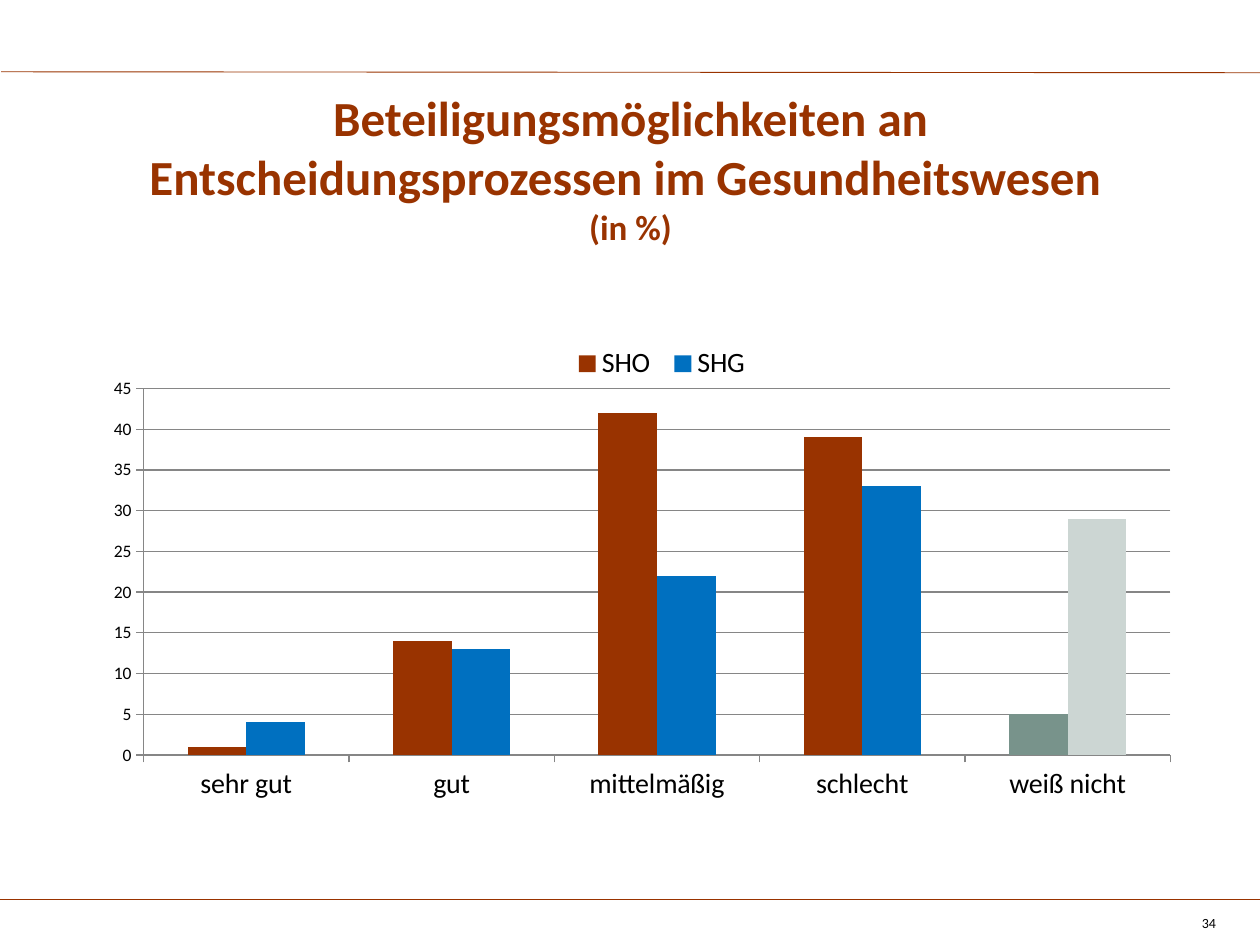
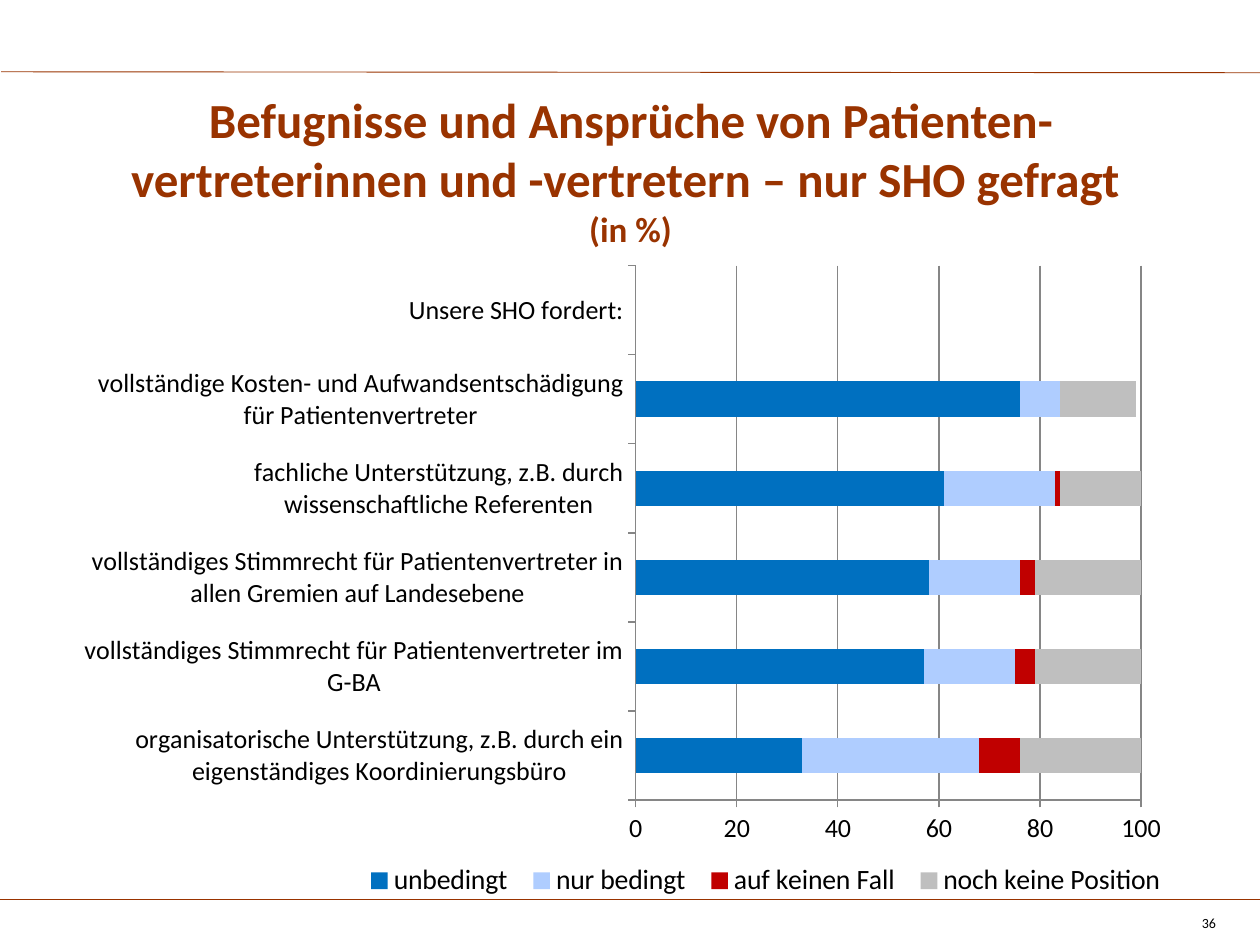
from dataclasses import dataclass, field
from typing import Optional

from lxml.etree import SubElement
from pptx import Presentation
from pptx.chart.data import CategoryChartData
from pptx.dml.color import RGBColor
from pptx.enum.chart import XL_CHART_TYPE as ChartType
from pptx.enum.chart import XL_LEGEND_POSITION as LegendPosition
from pptx.enum.chart import XL_TICK_MARK as TickMark
from pptx.enum.shapes import MSO_CONNECTOR as Connector
from pptx.enum.text import MSO_ANCHOR as Anchor
from pptx.enum.text import PP_ALIGN as Align
from pptx.oxml import parse_xml
from pptx.oxml.ns import nsdecls, qn
from pptx.util import Inches, Pt

RUST = RGBColor(0x99, 0x33, 0x00)
BLUE = RGBColor(0x00, 0x70, 0xC0)
LIGHT_BLUE = RGBColor(0xAF, 0xCD, 0xFF)
RED = RGBColor(0xC0, 0x00, 0x00)
SILVER = RGBColor(0xBF, 0xBF, 0xBF)
SAGE = RGBColor(0x78, 0x93, 0x8B)
PALE_SAGE = RGBColor(0xCC, 0xD6, 0xD3)
AXIS_GRAY = RGBColor(0x86, 0x86, 0x86)
BLACK = RGBColor(0x00, 0x00, 0x00)
FONT = "Calibri"
WIDTH, HEIGHT = Inches(10), Inches(7.5)


@dataclass(frozen=True)
class Box:
    left: float
    top: float
    width: float
    height: float

    def on_slide(self) -> tuple[int, int, int, int]:
        return (int(self.left * WIDTH), int(self.top * HEIGHT),
                int(self.width * WIDTH), int(self.height * HEIGHT))


@dataclass(frozen=True)
class Rule:
    left: float
    start: float
    end: float


@dataclass(frozen=True)
class Series:
    name: str
    values: tuple[Optional[float], ...]
    color: RGBColor
    point_colors: dict[int, RGBColor] = field(default_factory=dict)


@dataclass(frozen=True)
class ChartSlide:
    title: str
    title_top: float
    number: int
    chart_type: ChartType
    chart_box: Box
    plot_box: Box
    legend_box: Box
    categories: tuple[str, ...]
    series: tuple[Series, ...]
    category_size: int
    value_size: int
    maximum: int
    major_unit: int
    overlap: int


RULES = (Rule(0.001, 0.076, 0.077), Rule(0, 0.952, 0.952))
NUMBER_BOX = Box(0.925, 0.961, 0.05, 0.023)

SLIDES = (
    ChartSlide(
        title="Beteiligungsmöglichkeiten an Entscheidungsprozessen im Gesundheitswesen ",
        title_top=0.089,
        number=34,
        chart_type=ChartType.COLUMN_CLUSTERED,
        chart_box=Box(0.075, 0.343, 0.866, 0.559),
        plot_box=Box(0.045, 0.122, 0.941, 0.694),
        legend_box=Box(0.43, 0.03, 0.18, 0.09),
        categories=("sehr gut", "gut", "mittelmäßig", "schlecht", "weiß nicht"),
        series=(
            Series("SHO", (1, 14, 42, 39, 5), RUST, {4: SAGE}),
            Series("SHG", (4, 13, 22, 33, 29), BLUE, {4: PALE_SAGE}),
        ),
        category_size=16,
        value_size=10,
        maximum=45,
        major_unit=5,
        overlap=0,
    ),
    ChartSlide(
        title="Befugnisse und Ansprüche von Patienten-vertreterinnen und "
              "-vertretern – nur SHO gefragt ",
        title_top=0.091,
        number=36,
        chart_type=ChartType.BAR_STACKED,
        chart_box=Box(0.067, 0.248, 0.867, 0.724),
        plot_box=Box(0.5, 0.046, 0.467, 0.781),
        legend_box=Box(0.24, 0.91, 0.76, 0.07),
        categories=(
            "organisatorische Unterstützung, z.B. durch ein eigenständiges Koordinierungsbüro",
            "vollständiges Stimmrecht für Patientenvertreter im G-BA",
            "vollständiges Stimmrecht für Patientenvertreter in allen Gremien auf Landesebene",
            "fachliche Unterstützung, z.B. durch wissenschaftliche Referenten",
            "vollständige Kosten- und Aufwandsentschädigung für Patientenvertreter",
            "Unsere SHO fordert:",
        ),
        series=(
            Series("unbedingt", (33, 57, 58, 61, 76, None), BLUE),
            Series("nur bedingt", (35, 18, 18, 22, 8, None), LIGHT_BLUE),
            Series("auf keinen Fall", (8, 4, 3, 1, 0, None), RED),
            Series("noch keine Position", (24, 21, 21, 16, 15, None), SILVER),
        ),
        category_size=15,
        value_size=15,
        maximum=100,
        major_unit=20,
        overlap=100,
    ),
)


def style_font(font, size: int, color: RGBColor = BLACK, bold: bool = False) -> None:
    font.name = FONT
    font.size = Pt(size)
    font.bold = bold
    font.color.rgb = color


def add_run(paragraph, text: str, size: int, color: RGBColor, bold: bool = False) -> None:
    run = paragraph.add_run()
    run.text = text
    style_font(run.font, size, color, bold)


def add_paragraph_box(slide, box: Box, align: Align, anchor: Anchor):
    frame = slide.shapes.add_textbox(*box.on_slide()).text_frame
    frame.word_wrap = True
    frame.vertical_anchor = anchor
    paragraph = frame.paragraphs[0]
    paragraph.alignment = align
    return paragraph


def add_rule(slide, rule: Rule) -> None:
    line = slide.shapes.add_connector(
        Connector.STRAIGHT, int(rule.left * WIDTH), int(rule.start * HEIGHT),
        WIDTH, int(rule.end * HEIGHT))
    line.line.color.rgb = RUST
    line.line.width = Pt(0.5)
    SubElement(line.element.spPr, qn("a:effectLst"))


def add_title(slide, text: str, top: float) -> None:
    paragraph = add_paragraph_box(
        slide, Box(0.067, top, 0.867, 0.177), Align.CENTER, Anchor.MIDDLE)
    add_run(paragraph, text, 28, RUST, True)
    paragraph.add_line_break()
    add_run(paragraph, "(in %)", 20, RUST, True)


def add_number(slide, number: int) -> None:
    paragraph = add_paragraph_box(slide, NUMBER_BOX, Align.RIGHT, Anchor.TOP)
    add_run(paragraph, str(number), 8, BLACK)


def make_layout(box: Box, target: str = ""):
    sizes = (("x", box.left), ("y", box.top), ("w", box.width), ("h", box.height))
    modes = "".join(f'<c:{axis}Mode val="edge"/>' for axis in "xy")
    shares = "".join(f'<c:{name} val="{share}"/>' for name, share in sizes)
    return parse_xml(f'<c:layout {nsdecls("c")}><c:manualLayout>{target}{modes}{shares}'
                     '</c:manualLayout></c:layout>')


def place_plot_and_legend(chart, plot_box: Box, legend_box: Box) -> None:
    plot_area = chart.element.find(".//" + qn("c:plotArea"))
    legend = chart.element.find(".//" + qn("c:legend"))
    for parent in (plot_area, legend):
        for layout in parent.findall(qn("c:layout")):
            parent.remove(layout)
    plot_area.insert(0, make_layout(plot_box, '<c:layoutTarget val="inner"/>'))
    legend.find(qn("c:legendPos")).addnext(make_layout(legend_box))


def style_axis(axis, size: int) -> None:
    axis.major_tick_mark = TickMark.OUTSIDE
    axis.minor_tick_mark = TickMark.NONE
    axis.format.line.color.rgb = AXIS_GRAY
    style_font(axis.tick_labels.font, size)


def paint(fill, color: RGBColor) -> None:
    fill.solid()
    fill.fore_color.rgb = color


def add_bar_chart(slide, content: ChartSlide) -> None:
    data = CategoryChartData(number_format="General")
    data.categories = content.categories
    for series in content.series:
        data.add_series(series.name, series.values)
    chart = slide.shapes.add_chart(
        content.chart_type, *content.chart_box.on_slide(), data).chart
    style_font(chart.font, content.value_size)
    chart.has_title = False
    chart.has_legend = True
    chart.legend.position = LegendPosition.BOTTOM
    chart.legend.include_in_layout = False
    style_font(chart.legend.font, 16)
    place_plot_and_legend(chart, content.plot_box, content.legend_box)

    style_axis(chart.category_axis, content.category_size)
    values = chart.value_axis
    style_axis(values, content.value_size)
    values.minimum_scale = 0
    values.maximum_scale = content.maximum
    values.major_unit = content.major_unit
    values.has_major_gridlines = True
    values.major_gridlines.format.line.color.rgb = AXIS_GRAY
    values.tick_labels.number_format = "#,##0"
    values.tick_labels.number_format_is_linked = False

    plot = chart.plots[0]
    plot.vary_by_categories = False
    plot.gap_width = 150
    plot.overlap = content.overlap
    for bars, series in zip(plot.series, content.series):
        bars.invert_if_negative = False
        paint(bars.format.fill, series.color)
        for index, color in series.point_colors.items():
            paint(bars.points[index].format.fill, color)


def add_chart_slide(presentation, content: ChartSlide) -> None:
    slide = presentation.slides.add_slide(presentation.slide_layouts[6])
    for rule in RULES:
        add_rule(slide, rule)
    add_title(slide, content.title, content.title_top)
    add_number(slide, content.number)
    add_bar_chart(slide, content)


def main() -> None:
    presentation = Presentation()
    presentation.slide_width, presentation.slide_height = WIDTH, HEIGHT
    for content in SLIDES:
        add_chart_slide(presentation, content)
    presentation.save("out.pptx")


if __name__ == "__main__":
    main()
